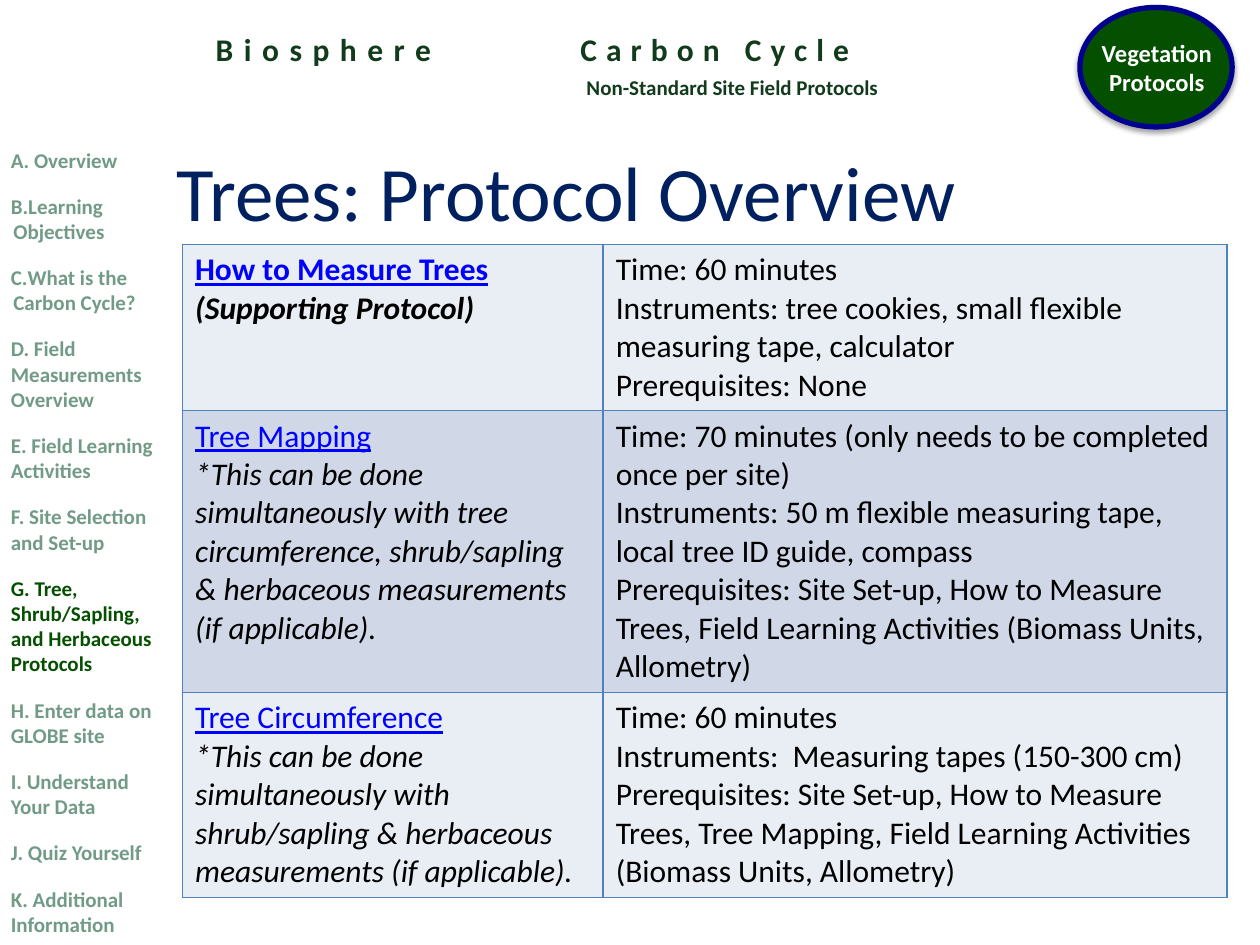
from lxml import etree
from pptx import Presentation
from pptx.dml.color import RGBColor
from pptx.enum import shapes, text
from pptx.oxml import ns, parse_xml
from pptx.util import Cm, Pt

COLORS = {
    "heading": "123B1C", "badge": "055000", "badge_rim": "000090",
    "muted": "719B86", "title": "002060", "link": "0000FF",
    "body": "000000", "white": "FFFFFF", "border": "4F81BD",
    "band_light": "E9EDF4", "band_dark": "D0D8E8",
}
FONT = "Calibri"
LINK = {"color": "link", "underline": True}
NOTE = {"italic": True}
BOLD = {"bold": True}

SECTIONS = [
    " Overview", "Learning Objectives", "What is the Carbon Cycle?",
    "D. Field Measurements Overview", "E. Field Learning Activities",
    "F. Site Selection and Set-up",
    "G. Tree, Shrub/Sapling, and Herbaceous Protocols",
    "H. Enter data on GLOBE site", "I. Understand Your Data",
    "J. Quiz Yourself", "K. Additional Information",
]
AUTO_LETTERED = 3
CURRENT_SECTION = 6

# Each protocol: row height in cm, left cell lines, right cell lines
PROTOCOLS = [
    (3.35,
     [("How to Measure Trees", LINK | BOLD),
      ("(Supporting Protocol)", NOTE | BOLD)],
     ["Time: 60 minutes",
      "Instruments: tree cookies, small flexible measuring tape, calculator",
      "Prerequisites: None"]),
    (5.68,
     [("Tree Mapping", LINK),
      ("*This can be done simultaneously with tree circumference, "
       "shrub/sapling & herbaceous measurements (if applicable).", NOTE)],
     ["Time: 70 minutes (only needs to be completed once per site)",
      "Instruments: 50 m flexible measuring tape, local tree ID guide, compass",
      "Prerequisites: Site Set-up, How to Measure Trees, "
      "Field Learning Activities (Biomass Units, Allometry)"]),
    (4.13,
     [("Tree Circumference", LINK),
      ("*This can be done simultaneously with shrub/sapling & herbaceous "
       "measurements (if applicable).", NOTE)],
     ["Time: 60 minutes",
      "Instruments:  Measuring tapes (150-300 cm)",
      "Prerequisites: Site Set-up, How to Measure Trees, Tree Mapping, "
      "Field Learning Activities (Biomass Units, Allometry)"]),
]


def rgb(name):
    return RGBColor.from_string(COLORS[name])


def add_run(paragraph, words, size, color="body", **formats):
    run = paragraph.add_run()
    run.text = words
    run.font.color.rgb = rgb(color)
    for key, value in {"name": FONT, "size": Pt(size), **formats}.items():
        setattr(run.font, key, value)
    return run


def add_paragraph(frame, index):
    return frame.add_paragraph() if index else frame.paragraphs[0]


def add_text_box(parent, left, top, width, height):
    frame = parent.add_textbox(Cm(left), Cm(top), Cm(width), Cm(height)).text_frame
    frame.word_wrap = True
    return frame


def add_header(slide, left, top, width):
    spheres = add_text_box(slide.shapes, left, top, width, 1.02).paragraphs[0]
    stops = etree.SubElement(spheres._p.get_or_add_pPr(), ns.qn("a:tabLst"))
    for words, position, spacing in [("Biosphere", 4.05, 6), ("Carbon Cycle", 11.4, 5.2)]:
        etree.SubElement(stops, ns.qn("a:tab"), pos=str(Cm(position)), algn="l")
        run = add_run(spheres, "\t" + words, 18, "heading", bold=True)
        run.font._element.set("spc", str(int(spacing * 100)))

    subtitle = add_text_box(slide.shapes, left + 8.43, top + 0.89, 12.57, 0.76).paragraphs[0]
    subtitle.alignment = text.PP_ALIGN.CENTER
    add_run(subtitle, "Non-Standard Site Field Protocols", 12, "heading", bold=True)


def add_badge(slide, left, top, width, height):
    badge = slide.shapes.add_group_shape()
    oval = badge.shapes.add_shape(shapes.MSO_SHAPE.OVAL, Cm(left), Cm(top), Cm(width), Cm(height))
    oval.fill.solid()
    oval.fill.fore_color.rgb = rgb("badge")
    oval.line.color.rgb = rgb("badge_rim")
    oval.line.width = Pt(3)
    oval.shadow.inherit = False
    effects = oval._element.spPr.find(ns.qn("a:effectLst"))
    effects.append(parse_xml(
        f'<a:outerShdw {ns.nsdecls("a")} blurRad="{Pt(3.1)}" dist="{Pt(1.8)}" '
        'dir="5400000" rotWithShape="0"><a:srgbClr val="000000">'
        '<a:alpha val="35000"/></a:srgbClr></a:outerShdw>'))

    label = add_text_box(badge.shapes, left + 0.13, top + 0.49, width - 0.23, 1.45).paragraphs[0]
    label.alignment = text.PP_ALIGN.CENTER
    add_run(label, "Vegetation Protocols", 14, "white", bold=True)


def add_section_menu(slide, left, top, width, height):
    menu = add_text_box(slide.shapes, left, top, width, height)
    for index, section in enumerate(SECTIONS):
        paragraph = add_paragraph(menu, index)
        paragraph.space_after = Pt(12)
        if index < AUTO_LETTERED:
            props = paragraph._p.get_or_add_pPr()
            props.set("marL", str(Cm(0.05)))
            props.set("indent", str(-Cm(0.05)))
            etree.SubElement(props, ns.qn("a:buFont"), typeface="+mj-lt")
            etree.SubElement(props, ns.qn("a:buAutoNum"), type="alphaUcPeriod")
        color = "badge" if index == CURRENT_SECTION else "muted"
        add_run(paragraph, section, 12, color, bold=True)


def place_title(slide, left, top, width, height):
    title = slide.shapes.title
    title.left, title.top, title.width, title.height = map(Cm, (left, top, width, height))
    frame = title.text_frame
    frame.auto_size = text.MSO_AUTO_SIZE.NONE
    frame.vertical_anchor = text.MSO_ANCHOR.TOP
    frame.paragraphs[0].alignment = text.PP_ALIGN.CENTER
    add_run(frame.paragraphs[0], "Trees: Protocol Overview", 44, "title")


def fill_cell(cell, lines, band):
    for index, (words, formats) in enumerate(lines):
        add_run(add_paragraph(cell.text_frame, index), words, 18, **{"bold": False, **formats})
    cell.fill.solid()
    cell.fill.fore_color.rgb = rgb(band)
    for index, side in enumerate("LRTB"):
        cell._tc.get_or_add_tcPr().insert(index, parse_xml(
            f'<a:ln{side} {ns.nsdecls("a")} w="{Pt(1)}"><a:solidFill>'
            f'<a:srgbClr val="{COLORS["border"]}"/></a:solidFill></a:ln{side}>'))


def add_protocol_table(slide, left, top, width):
    height = sum(row_height for row_height, _, _ in PROTOCOLS)
    table = slide.shapes.add_table(
        len(PROTOCOLS), 2, Cm(left), Cm(top), Cm(width), Cm(height)).table
    table.first_row = False
    name_width = 8.48
    table.columns[0].width = Cm(name_width)
    table.columns[1].width = Cm(width - name_width)
    for index, (row_height, names, details) in enumerate(PROTOCOLS):
        table.rows[index].height = Cm(row_height)
        band = "band_dark" if index % 2 else "band_light"
        fill_cell(table.cell(index, 0), names, band)
        fill_cell(table.cell(index, 1), [(line, {}) for line in details], band)


def main():
    deck = Presentation()
    deck.slide_width, deck.slide_height = Cm(25.4), Cm(19.05)
    slide = deck.slides.add_slide(deck.slide_layouts[5])
    add_header(slide, 0.05, 0.48, 25.4)
    add_badge(slide, 21.77, 0.15, 3.07, 2.41)
    add_section_menu(slide, -0.03, 2.84, 3.61, 16.33)
    place_title(slide, 3.23, 2.79, 16.38, 1.7)
    add_protocol_table(slide, 3.68, 4.93, 21.06)
    deck.save("out.pptx")


if __name__ == "__main__":
    main()
